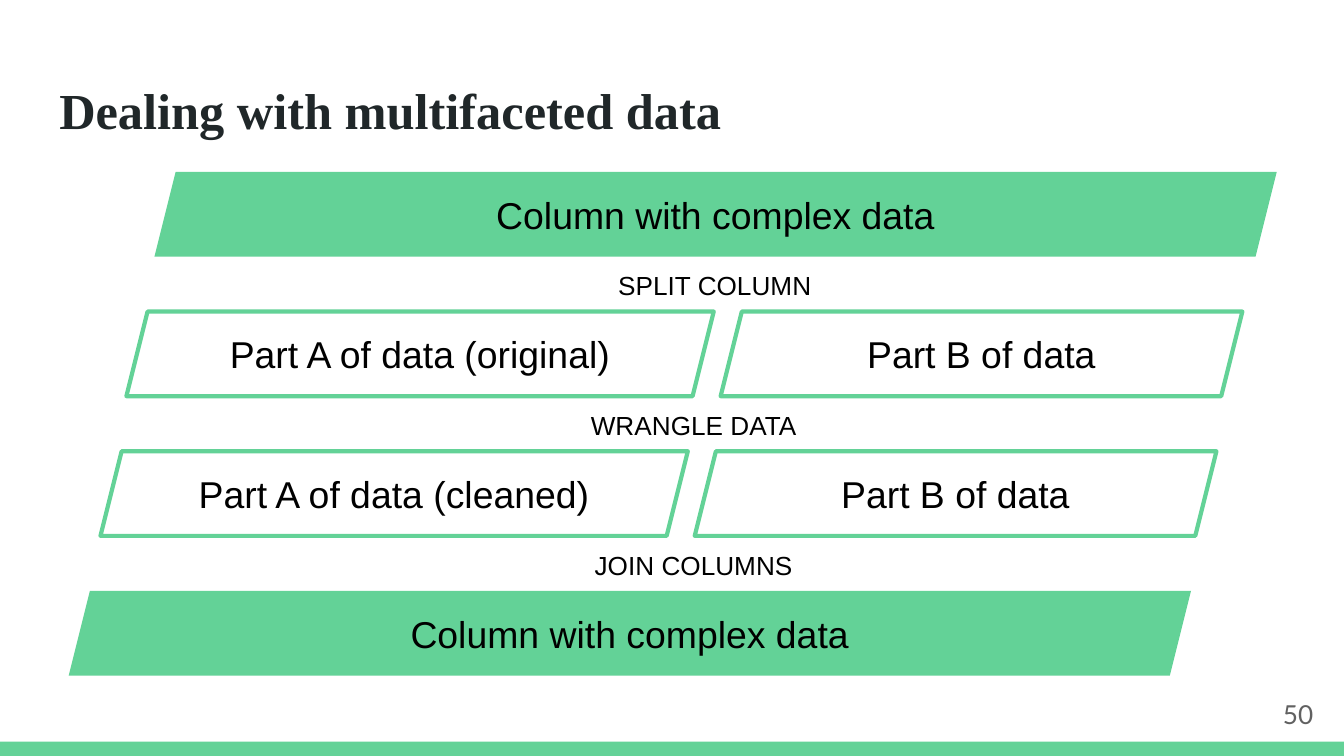
from pptx import Presentation
from pptx.dml.color import RGBColor
from pptx.enum.shapes import MSO_SHAPE
from pptx.enum.text import MSO_ANCHOR, PP_ALIGN
from pptx.util import Cm, Pt

GREEN, BLACK, DARK, GRAY = "63D297", "000000", "202729", "616161"
ROW_TOP, ROW_PITCH, ROW_HEIGHT = 3.25, 2.64, 1.6
FULL_WIDTH, PART_A_WIDTH, PART_B_WIDTH, PART_B_OFFSET = 21.21, 11.1, 9.86, 11.23


def color(value):
    return RGBColor.from_string(value)


class SlideBuilder:
    """Holds the text style and the current slide, and adds elements to it."""

    def __init__(self, slide, font="Arial", inset=0.25):
        self.slide = slide
        self.font = font
        self.inset = Cm(inset)

    def place(self, shape, left, top, width, height):
        shape.left, shape.top = Cm(left), Cm(top)
        shape.width, shape.height = Cm(width), Cm(height)

    def set_text(self, shape, text, size, text_color=BLACK, font=None, bold=False,
                 align=PP_ALIGN.CENTER, anchor=MSO_ANCHOR.MIDDLE):
        frame = shape.text_frame
        frame.text = text
        frame.word_wrap = True
        frame.vertical_anchor = anchor
        frame.margin_left = frame.margin_right = self.inset
        frame.margin_top = frame.margin_bottom = self.inset
        paragraph = frame.paragraphs[0]
        paragraph.alignment = align
        for run in paragraph.runs:
            run.font.name = font or self.font
            run.font.size = Pt(size)
            run.font.bold = bold
            run.font.color.rgb = color(text_color)

    def title(self, text, left, top, width, height):
        shape = self.slide.shapes.title
        self.place(shape, left, top, width, height)
        self.set_text(shape, text, 27, DARK, "Times New Roman", True,
                      PP_ALIGN.LEFT, MSO_ANCHOR.TOP)

    def text(self, text, left, top, width, height, **style):
        box = self.slide.shapes.add_textbox(Cm(left), Cm(top), Cm(width), Cm(height))
        self.set_text(box, text, 14, **style)

    def shape(self, kind, left, top, width, height, filled=True):
        shape = self.slide.shapes.add_shape(
            kind, Cm(left), Cm(top), Cm(width), Cm(height))
        shape.shadow.inherit = False
        if filled:
            shape.fill.solid()
            shape.fill.fore_color.rgb = color(GREEN)
            shape.line.fill.background()
        else:
            shape.fill.background()
            shape.line.color.rgb = color(GREEN)
            shape.line.width = Pt(2.25)
        return shape

    def column(self, text, left, top, width, filled):
        shape = self.shape(MSO_SHAPE.PARALLELOGRAM, left, top, width, ROW_HEIGHT, filled)
        shape.adjustments[0] = 0.25
        self.set_text(shape, text, 20)


def main():
    presentation = Presentation()
    presentation.slide_width, presentation.slide_height = Cm(25.4), Cm(14.29)
    slide = presentation.slides.add_slide(presentation.slide_layouts[5])
    builder = SlideBuilder(slide)

    builder.shape(MSO_SHAPE.RECTANGLE, 0, 14.02, 25.4, 0.27)
    builder.title("Dealing with multifaceted data", 0.87, 1.24, 23.67, 1.6)
    builder.text("50", 23.55, 12.95, 1.52, 1.09, text_color=GRAY, font="Lato",
                 align=PP_ALIGN.RIGHT)

    rows = [
        (2.92, ["Column with complex data"]),
        (2.39, ["Part A of data (original)", "Part B of data"]),
        (1.9, ["Part A of data (cleaned)", "Part B of data"]),
        (1.3, ["Column with complex data"]),
    ]
    for index, (left, names) in enumerate(rows):
        top = ROW_TOP + index * ROW_PITCH
        if len(names) == 1:
            builder.column(names[0], left, top, FULL_WIDTH, True)
        else:
            builder.column(names[0], left, top, PART_A_WIDTH, False)
            builder.column(names[1], left + PART_B_OFFSET, top, PART_B_WIDTH, False)

    steps = [("SPLIT COLUMN", 11.07), ("WRANGLE DATA", 10.67), ("JOIN COLUMNS", 10.67)]
    for index, (name, left) in enumerate(steps):
        top = ROW_TOP + ROW_HEIGHT + index * ROW_PITCH
        builder.text(name, left, top, 4.88, 1.12, anchor=MSO_ANCHOR.TOP)

    presentation.save("out.pptx")


if __name__ == "__main__":
    main()
